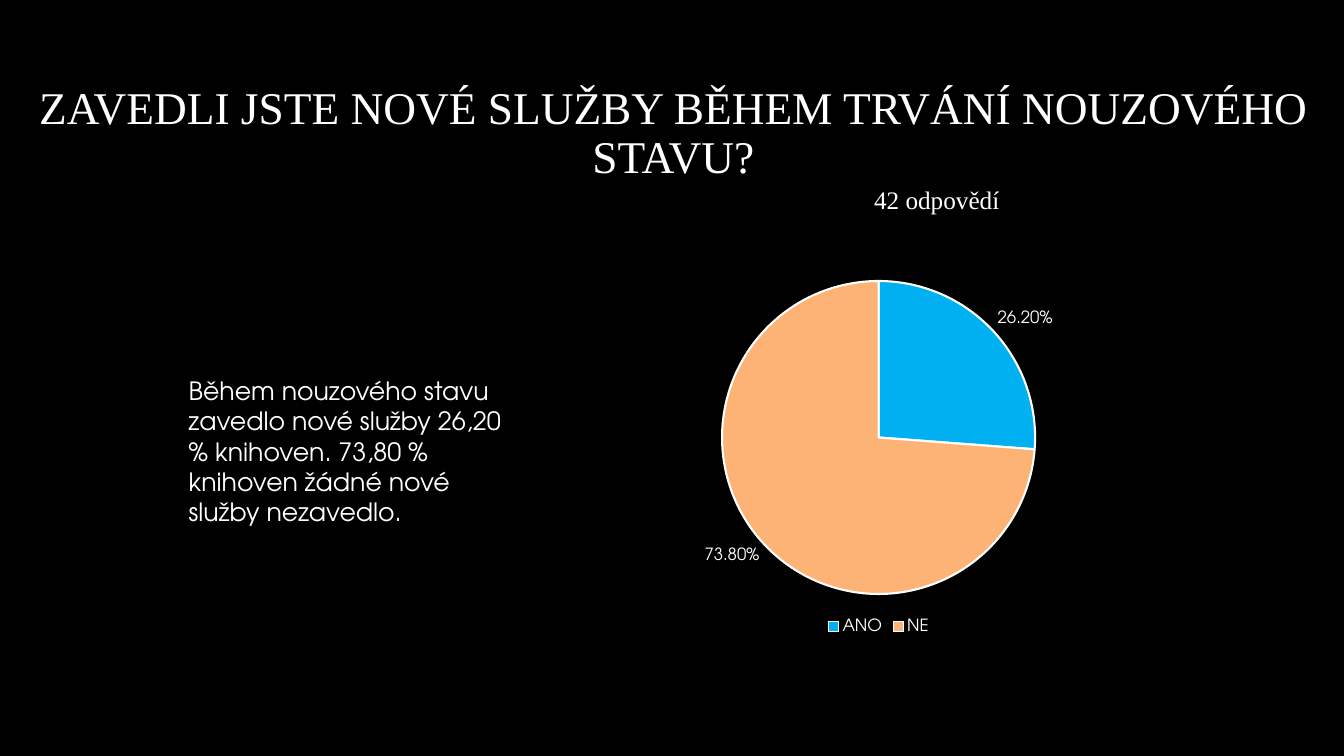
from dataclasses import dataclass

from lxml import etree
from pptx import Presentation
from pptx import util as u
from pptx.chart.data import CategoryChartData
from pptx.dml.color import RGBColor
from pptx.enum import chart as charts
from pptx.enum import text
from pptx.oxml import ns

WIDTH, HEIGHT = 13.33, 7.5


@dataclass(frozen=True)
class Theme:
    background: str = "000000"
    ink: str = "FFFFFF"
    slices: tuple = ("00B0F0", "FEB376")
    serif: str = "Times New Roman"
    sans: str = "TeX Gyre Adventor"
    title: float = 32.4
    body: float = 18
    chart: float = 12


THEME = Theme()


def apply(target, values):
    for name, value in values.items():
        setattr(target, name, value)


def style_font(font, face, size):
    apply(font, {"name": face, "size": u.Pt(size)})
    font.color.rgb = RGBColor.from_string(THEME.ink)


def place(left, top, width, height):
    return (u.Inches(left * WIDTH), u.Inches(top * HEIGHT),
            u.Inches(width * WIDTH), u.Inches(height * HEIGHT))


def add_text(page, words, area, face, size, frame=None, paragraph=None):
    box = page.shapes.add_textbox(*place(*area))
    apply(box.text_frame, {"word_wrap": True, **(frame or {})})
    para = box.text_frame.paragraphs[0]
    apply(para, paragraph or {})
    span = para.add_run()
    span.text = words
    style_font(span.font, face, size)


def set_plot_area(chart, **shares):
    plot_area = chart._chartSpace.find(".//" + ns.qn("c:plotArea"))
    for old in plot_area.findall(ns.qn("c:layout")):
        plot_area.remove(old)
    layout = etree.Element(ns.qn("c:layout"))
    manual = etree.SubElement(layout, ns.qn("c:manualLayout"))
    settings = {"layoutTarget": "inner", "xMode": "edge", "yMode": "edge", **shares}
    for name, value in settings.items():
        etree.SubElement(manual, ns.qn("c:" + name)).set("val", str(value))
    plot_area.insert(0, layout)


def add_pie(page, series_name, answers, area):
    data = CategoryChartData(number_format="0.00%")
    data.categories = list(answers)
    data.add_series(series_name, list(answers.values()))
    chart = page.shapes.add_chart(
        charts.XL_CHART_TYPE.PIE, *place(*area), data).chart
    apply(chart, {"has_title": False, "has_legend": True})
    style_font(chart.font, THEME.sans, THEME.chart)
    apply(chart.legend, {"position": charts.XL_LEGEND_POSITION.BOTTOM,
                         "include_in_layout": False})
    style_font(chart.legend.font, THEME.sans, THEME.chart)

    plot = chart.plots[0]
    apply(plot, {"vary_by_categories": True, "has_data_labels": True})
    apply(plot.data_labels, {
        "show_value": True, "show_percentage": False,
        "number_format": "0.00%", "number_format_is_linked": False,
        "position": charts.XL_LABEL_POSITION.OUTSIDE_END})
    style_font(plot.data_labels.font, THEME.sans, THEME.chart)
    for index, color in enumerate(THEME.slices):
        form = plot.series[0].points[index].format
        form.fill.solid()
        form.fill.fore_color.rgb = RGBColor.from_string(color)
        form.line.color.rgb = RGBColor.from_string(THEME.ink)
        form.line.width = u.Pt(1.5)
    set_plot_area(chart, x=0.33, y=0.04, w=0.34, h=0.84)


def main():
    deck = Presentation()
    apply(deck, {"slide_width": u.Inches(WIDTH), "slide_height": u.Inches(HEIGHT)})
    page = deck.slides.add_slide(deck.slide_layouts[6])
    page.background.fill.solid()
    page.background.fill.fore_color.rgb = RGBColor.from_string(THEME.background)

    add_text(page, "ZAVEDLI JSTE NOVÉ SLUŽBY BĚHEM TRVÁNÍ NOUZOVÉHO STAVU?",
             (0.0075, 0.11, 0.987, 0.135), THEME.serif, THEME.title,
             {"vertical_anchor": text.MSO_ANCHOR.MIDDLE},
             {"alignment": text.PP_ALIGN.CENTER, "line_spacing": 0.9})
    add_pie(page, "Series 1", {"ANO": 0.262, "NE": 0.738},
            (0.3075, 0.352, 0.6925, 0.493))
    add_text(page, "42 odpovědí", (0.643, 0.237, 0.155, 0.095),
             THEME.serif, THEME.body)
    add_text(page, "Během nouzového stavu zavedlo nové služby 26,20 % knihoven. "
             "73,80 % knihoven žádné nové služby nezavedlo.",
             (0.133, 0.49, 0.248, 0.216), THEME.sans, THEME.body)
    deck.save("out.pptx")


if __name__ == "__main__":
    main()
